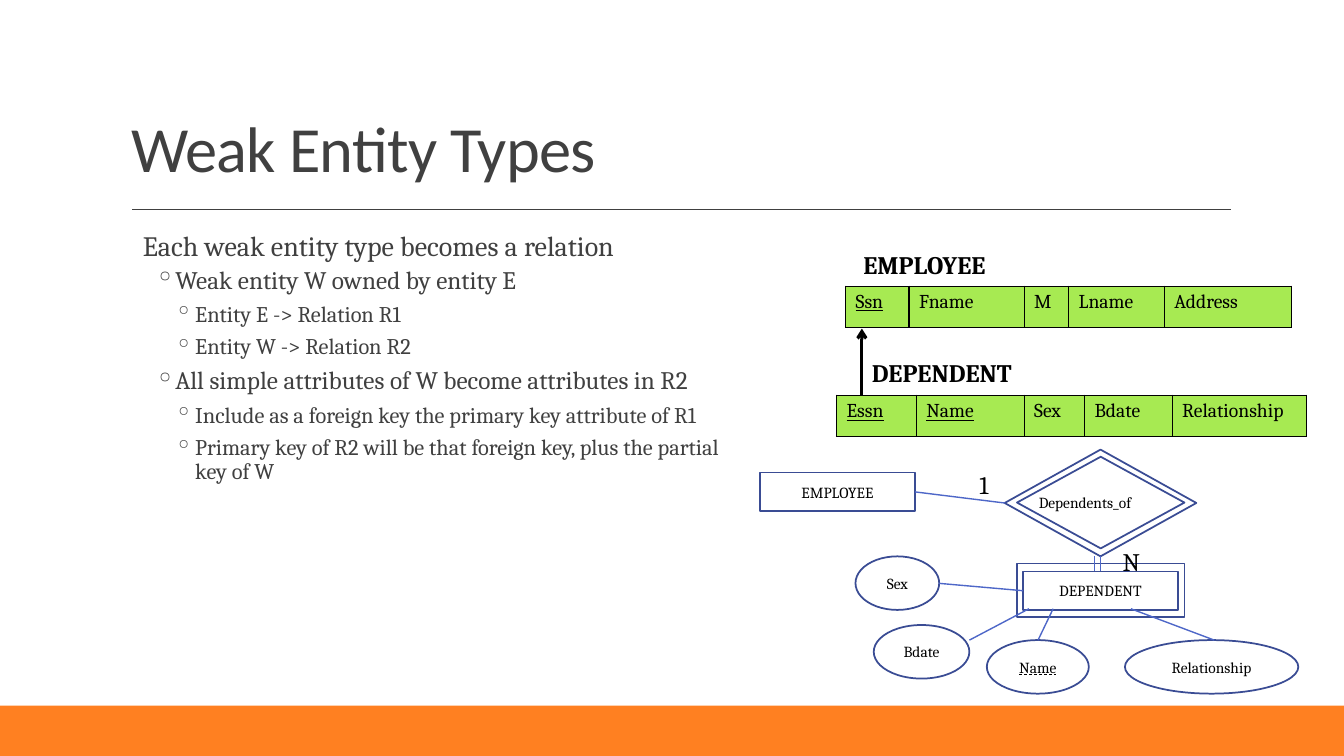
"""Builds the slide on mapping weak entity types to relations."""
from pptx import Presentation, util as u
from pptx.dml.color import RGBColor
from pptx.enum import shapes as s, text as t
from pptx.oxml import parse_xml
from pptx.oxml.ns import nsdecls, qn
from lxml import etree

WHITE = RGBColor(0xFF, 0xFF, 0xFF)
BLACK = RGBColor(0, 0, 0)
GRAY = RGBColor(0x40, 0x40, 0x40)
ORANGE = RGBColor(0xFF, 0x80, 0x21)
NAVY = RGBColor(0x3A, 0x4C, 0x94)
BLUE = RGBColor(0x4E, 0x67, 0xC8)
GREEN = RGBColor(0xA7, 0xEA, 0x52)

RECT = s.MSO_SHAPE.RECTANGLE
DIAMOND = s.MSO_SHAPE.DIAMOND
OVAL = s.MSO_SHAPE.OVAL
TOP, LEFT, BOTTOM, RIGHT = range(4)

RULES = [
    (0, "Each weak entity type becomes a relation"),
    (1, "Weak entity W owned by entity E"),
    (2, "Entity E -> Relation R1"),
    (2, "Entity W -> Relation R2"),
    (1, "All simple attributes of W become attributes in R2"),
    (2, "Include as a foreign key the primary key attribute of R1"),
    (2, "Primary key of R2 will be that foreign key, plus the partial key of W"),
]
LEVELS = [(20, 0.25, 0, 1.1), (18, 1.07, -0.51, 0.9), (16, 1.57, -0.51, 0.9)]


def cm(*lengths):
    """Turn centimetres into slide lengths."""
    return [u.Cm(length) for length in lengths]


def add_run(paragraph, words, size, color=BLACK, font="Cambria", bold=False, underline=None):
    """Add one formatted run."""
    run = paragraph.add_run()
    run.text = words
    run.font.size, run.font.name = u.Pt(size), font
    run.font.color.rgb = color
    run.font.bold, run.font.underline = bold, underline
    return run


def add_label(slide, box, words, size, bold=False):
    """Add a one-line text that does not wrap."""
    frame = slide.shapes.add_textbox(*cm(*box)).text_frame
    frame.word_wrap = False
    add_run(frame.paragraphs[0], words, size, bold=bold)


def add_figure(slide, kind, box, words="", fill=WHITE, line=NAVY, underline=None):
    """Add a diagram shape, with centred words if it has any."""
    figure = slide.shapes.add_shape(kind, *cm(*box))
    figure.shadow.inherit = False
    if fill is None:
        figure.fill.background()
    else:
        figure.fill.solid()
        figure.fill.fore_color.rgb = fill
    if line is None:
        figure.line.fill.background()
    else:
        figure.line.color.rgb = line
        figure.line.width = u.Pt(1.25)
    if words:
        frame = figure.text_frame
        frame.word_wrap = False
        frame.vertical_anchor = t.MSO_ANCHOR.MIDDLE
        frame.paragraphs[0].alignment = t.PP_ALIGN.CENTER
        add_run(frame.paragraphs[0], words, 11, underline=underline)
    return figure


def add_link(slide, ends, color=BLUE, width=1, start=None, finish=None, arrow=False):
    """Draw a straight line, joined to the (shape, side) pairs given."""
    link = slide.shapes.add_connector(s.MSO_CONNECTOR.STRAIGHT, *cm(*ends))
    link.line.color.rgb = color
    link.line.width = u.Pt(width)
    if arrow:
        etree.SubElement(link.line._get_or_add_ln(), qn("a:tailEnd"), type="arrow")
    etree.SubElement(link._element.spPr, qn("a:effectLst"))
    if start:
        link.begin_connect(*start)
    if finish:
        link.end_connect(*finish)


def add_relation(slide, left, top, attributes):
    """Add a one-row table of (name, width, is key) attributes."""
    total = sum(width for _, width, _ in attributes)
    frame = slide.shapes.add_table(1, len(attributes), *cm(left, top, total, 1.04))
    relation = frame.table
    relation.first_row = relation.horz_banding = False
    for column, (name, width, is_key) in enumerate(attributes):
        relation.columns[column].width = u.Cm(width)
        cell = relation.cell(0, column)
        add_run(cell.text_frame.paragraphs[0], name, 14, underline=is_key)
        properties = cell._tc.get_or_add_tcPr()
        for side in "LRTB":
            properties.append(parse_xml(
                f'<a:ln{side} {nsdecls("a")} w="12700"><a:solidFill>'
                f'<a:srgbClr val="{BLACK}"/></a:solidFill></a:ln{side}>'))
        cell.fill.solid()
        cell.fill.fore_color.rgb = GREEN


def add_title(slide, words):
    """Place and format the title."""
    title = slide.shapes.title
    title.left, title.top, title.width, title.height = cm(3.05, 0.79, 27.94, 4.04)
    frame = title.text_frame
    frame.auto_size = t.MSO_AUTO_SIZE.NONE
    frame.vertical_anchor = t.MSO_ANCHOR.BOTTOM
    heading = frame.paragraphs[0]
    heading.alignment = t.PP_ALIGN.LEFT
    heading.line_spacing = 0.9
    run = add_run(heading, words, 46, GRAY, "Calibri")
    run._r.get_or_add_rPr().set("spc", "-50")


def add_rules(slide):
    """Add the outline of mapping rules."""
    frame = slide.shapes.add_textbox(*cm(3.35, 5.54, 15.14, 11.56)).text_frame
    frame.word_wrap = True
    frame.margin_left = frame.margin_right = 0
    for index, (level, words) in enumerate(RULES):
        size, margin, indent, spacing = LEVELS[level]
        rule = frame.paragraphs[0] if index == 0 else frame.add_paragraph()
        rule.level = level
        properties = rule._p.get_or_add_pPr()
        properties.set("marL", str(u.Cm(margin)))
        properties.set("indent", str(u.Cm(indent)))
        if level:
            etree.SubElement(properties, qn("a:buChar"), char="◦")
        rule.line_spacing = spacing
        rule.space_before = u.Pt(2 if index else 0)
        rule.space_after = u.Pt(4 if level else 2)
        add_run(rule, words, size, GRAY)


def add_diagram(slide):
    """Draw the entity-relationship diagram."""
    employee = add_figure(slide, RECT, (19.15, 11.91, 3.91, 0.97), "EMPLOYEE")
    add_label(slide, (25.93, 12.29, 3.1, 0.74), "Dependents_of", 11)
    add_figure(slide, DIAMOND, (25.63, 11.51, 4.22, 2.31), fill=None)
    add_figure(slide, RECT, (25.63, 14.2, 4.22, 1.35))
    dependent = add_figure(slide, RECT, (25.78, 14.4, 3.91, 0.97), "DEPENDENT")
    relationship = add_figure(slide, DIAMOND, (25.32, 11.33, 4.83, 2.69), fill=None)

    add_figure(slide, OVAL, (21.56, 14.02, 2.11, 1.35), "Sex")
    add_figure(slide, OVAL, (22.02, 15.75, 2.41, 1.35), "Bdate")
    add_figure(slide, OVAL, (24.87, 16.13, 2.57, 1.35), "Name",
               underline=t.MSO_UNDERLINE.DASH_LINE)
    add_figure(slide, OVAL, (28.35, 16.13, 4.37, 1.35), "Relationship")

    add_link(slide, (23.06, 12.4, 25.32, 12.67),
             start=(employee, RIGHT), finish=(relationship, LEFT))
    add_link(slide, (27.74, 14.4, 27.74, 14.02),
             start=(dependent, TOP), finish=(relationship, BOTTOM))
    add_link(slide, (27.58, 14.4, 27.58, 14.02))
    add_link(slide, (25.78, 14.88, 23.67, 14.7), start=(dependent, LEFT))
    add_link(slide, (25.93, 15.34, 24.43, 16.13))
    add_link(slide, (26.54, 15.34, 26.16, 16.13))
    add_link(slide, (28.5, 15.34, 30.6, 16.13))
    add_label(slide, (24.43, 11.71, 0.71, 1.02), "1", 18)
    add_label(slide, (28.04, 13.64, 0.99, 1.02), "N", 18)


def main():
    """Build and save the slide."""
    deck = Presentation()
    deck.slide_width, deck.slide_height = cm(33.87, 19.05)
    slide = deck.slides.add_slide(deck.slide_layouts[5])
    add_figure(slide, RECT, (0, 17.78, 33.87, 1.27), fill=ORANGE, line=None)
    add_link(slide, (3.33, 5.28, 31.01, 5.28), GRAY)
    add_title(slide, "Weak Entity Types")
    add_rules(slide)
    add_diagram(slide)
    add_relation(slide, 21.31, 7.21, [
        ("Ssn", 1.6, True), ("Fname", 2.9, False), ("M", 1.12, False),
        ("Lname", 2.41, False), ("Address", 3.2, False)])
    add_label(slide, (21.51, 6.15, 4.04, 1.02), "EMPLOYEE", 18, bold=True)
    add_relation(slide, 21.08, 9.96, [
        ("Essn", 2.01, True), ("Name", 2.72, True), ("Sex", 1.52, False),
        ("Bdate", 2.21, False), ("Relationship", 3.38, False)])
    add_label(slide, (21.72, 8.89, 4.47, 1.02), "DEPENDENT", 18, bold=True)
    add_link(slide, (21.72, 9.96, 21.72, 8.28), BLACK, 2.25, arrow=True)
    deck.save("out.pptx")


if __name__ == "__main__":
    main()
